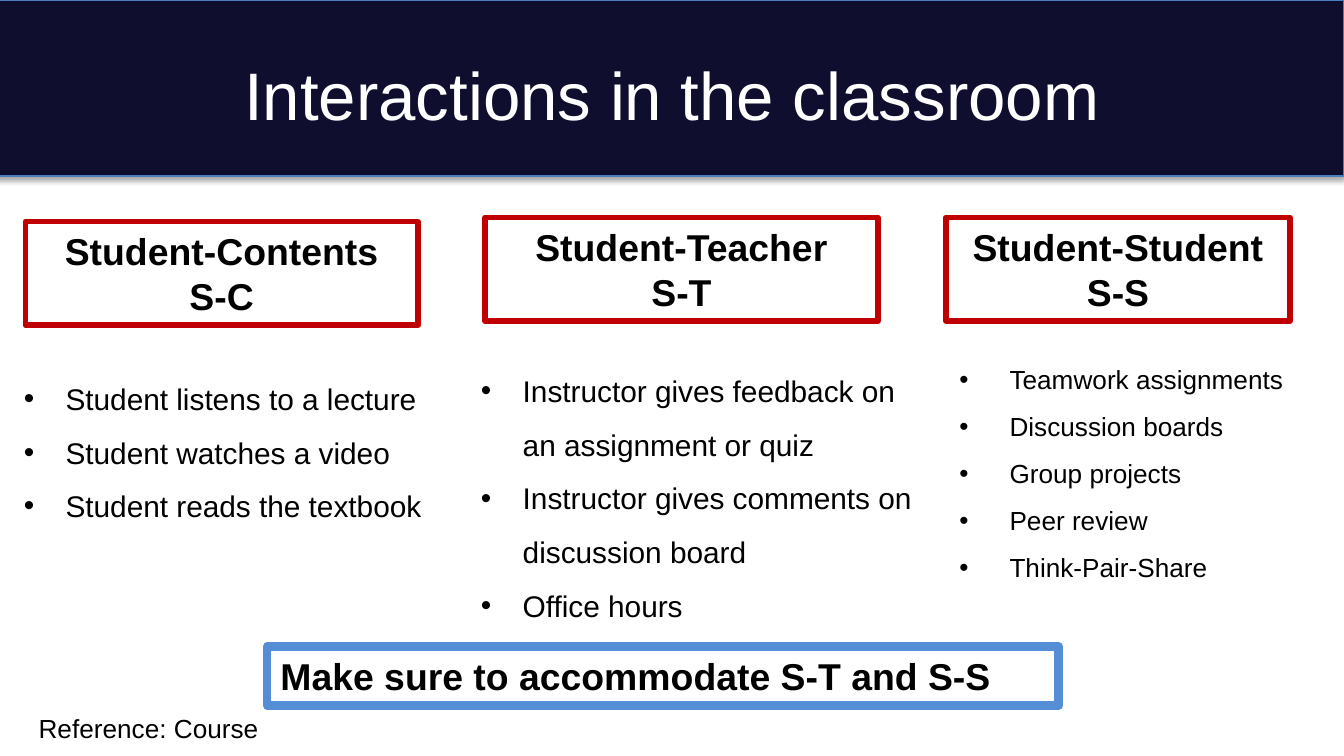
from lxml import etree
from pptx import Presentation
from pptx.dml.color import RGBColor
from pptx.enum import shapes, text
from pptx.oxml import ns
from pptx.util import Cm, Pt

NAVY = RGBColor(0x10, 0x0E, 0x2F)
EDGE = RGBColor(0x4B, 0x7E, 0xBC)
RED = RGBColor(0xC0, 0x00, 0x00)
BLUE = RGBColor(0x55, 0x8E, 0xD5)
BLACK = RGBColor(0, 0, 0)
WHITE = RGBColor(0xFF, 0xFF, 0xFF)
FONT = "Arial"
MID = text.PP_ALIGN.CENTER

# Each head: box (left, top, width, height) and lines
HEADS = [
    ((0.48, 4.19, 7.42, 1.96), ["Student-Contents", "S-C"]),
    ((9.17, 4.11, 7.42, 1.96), ["Student-Teacher", "S-T"]),
    ((17.88, 4.11, 6.5, 1.96), ["Student-Student", "S-S"]),
]

# Each list: box, text size, indent, items
LISTS = [
    ((0.2, 6.73, 8.69, 3.2), 16, 0.79, [
        "Student listens to a lecture",
        "Student watches a video",
        "Student reads the textbook",
    ]),
    ((8.84, 6.58, 9.04, 5.26), 16, 0.79, [
        "Instructor gives feedback on an assignment or quiz",
        "Instructor gives comments on discussion board",
        "Office hours",
    ]),
    ((17.88, 6.45, 7.14, 4.62), 14, 0.95, [
        "Teamwork assignments",
        "Discussion boards",
        "Group projects",
        "Peer review",
        "Think-Pair-Share",
    ]),
]


def add_rect(slide, box, edge, width, fill=None):
    rect = slide.shapes.add_shape(shapes.MSO_SHAPE.RECTANGLE, *map(Cm, box))
    rect.shadow.inherit = False
    if fill is None:
        rect.fill.background()
    else:
        rect.fill.solid()
        rect.fill.fore_color.rgb = fill
    rect.line.color.rgb = edge
    rect.line.width = Pt(width)
    return rect


def add_shade(shape):
    """Give the shape a soft shadow straight below it."""
    effects = shape._element.spPr.find(ns.qn("a:effectLst"))
    shade = etree.SubElement(effects, ns.qn("a:outerShdw"), blurRad="40000",
                             dist="23000", dir="5400000", rotWithShape="0")
    tint = etree.SubElement(shade, ns.qn("a:srgbClr"), val="000000")
    etree.SubElement(tint, ns.qn("a:alpha"), val="35000")


def add_dot(para, indent):
    """Hang the paragraph on a round bullet."""
    props = para._p.get_or_add_pPr()
    props.set("marL", str(Cm(indent)))
    props.set("indent", str(-Cm(indent)))
    etree.SubElement(props, ns.qn("a:buFont"), typeface=FONT)
    etree.SubElement(props, ns.qn("a:buChar"), char="•")


def write(shape, lines, size, bold=False, color=BLACK,
          align=text.PP_ALIGN.LEFT, anchor=text.MSO_ANCHOR.TOP, indent=None):
    frame = shape.text_frame
    frame.word_wrap = True
    frame.vertical_anchor = anchor
    frame.text = "\n".join(lines)
    for para in frame.paragraphs:
        if indent is not None:
            add_dot(para, indent)
            para.line_spacing = 1.5
        para.alignment = align
        font = para.font
        font.name = FONT
        font.size = Pt(size)
        font.bold = bold
        font.color.rgb = color


def add_text(slide, box, lines, size, **style):
    write(slide.shapes.add_textbox(*map(Cm, box)), lines, size, **style)


def main():
    deck = Presentation()
    deck.slide_width, deck.slide_height = Cm(25.4), Cm(14.29)
    slide = deck.slides.add_slide(deck.slide_layouts[6])

    add_shade(add_rect(slide, (-0.1, 0, 25.5, 3.33), EDGE, 0.75, NAVY))
    add_text(slide, (1.27, 0.58, 22.86, 2.39),
             ["Interactions in the classroom"], 36, color=WHITE,
             align=MID, anchor=text.MSO_ANCHOR.MIDDLE)

    for box, lines in HEADS:
        write(add_rect(slide, box, RED, 3), lines, 20, bold=True, align=MID)
    for box, size, indent, items in LISTS:
        add_text(slide, box, items, size, indent=indent)

    note = add_rect(slide, (5.05, 12.22, 14.96, 1.12), BLUE, 4.5)
    write(note, ["Make sure to accommodate S-T and S-S"], 20, bold=True)
    add_text(slide, (0.48, 13.34, 5.61, 0.86), ["Reference: Course"], 14)

    deck.save("out.pptx")


if __name__ == "__main__":
    main()
